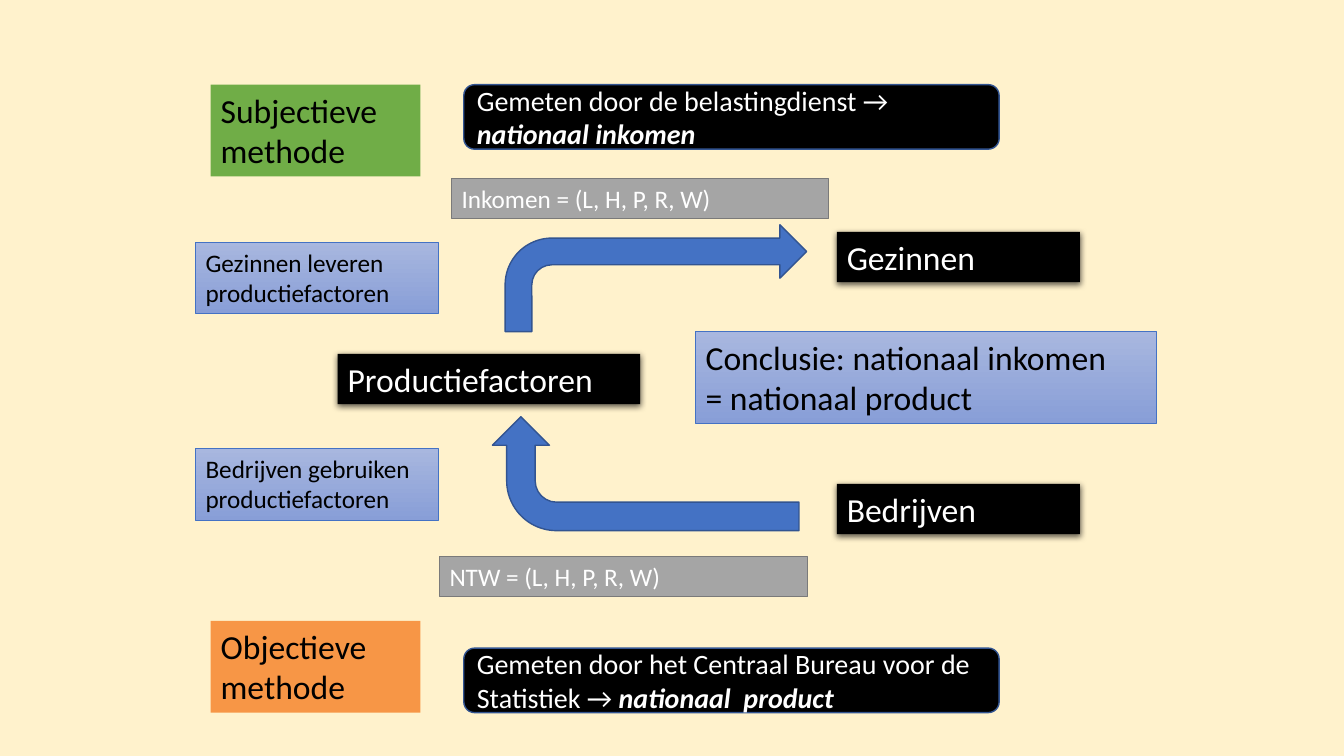
from lxml import etree
from pptx import Presentation, util as u
from pptx.dml.color import RGBColor
from pptx.enum import shapes, text
from pptx.oxml.ns import qn

HUES = {
    "cream": "FFF2CC", "black": "000000", "white": "FFFFFF",
    "blue": "4472C4", "navy": "325491", "pale": "A8B7DF", "deep": "889ED7",
    "gray": "A5A5A5", "slate": "7A7A7A", "green": "70AD47", "orange": "F79646",
}
FONT = "Calibri"

# style: fill, edge, edge width, text colour, size, shadow
STYLES = {
    "actor": ("black", None, 0, "white", 24, True),
    "flow": (("pale", "deep"), "blue", 0.5, "black", 18, False),
    "sum": (("pale", "deep"), "blue", 0.5, "black", 24, False),
    "formula": ("gray", "slate", 1, "white", 18, False),
    "source": ("black", "navy", 1, "white", 20, False),
    "good": ("green", None, 0, "black", 24, False),
    "warm": ("orange", None, 0, "black", 24, False),
    "arrow": ("blue", "navy", 1, "white", 18, False),
}

BOXES = [
    ("actor", (8.3, 4.8, 2.41, 0.5), ["Bedrijven"]),
    ("actor", (8.3, 2.3, 2.41, 0.5), ["Gezinnen"]),
    ("actor", (3.35, 3.51, 3, 0.5), ["Productiefactoren"]),
    ("flow", (1.94, 4.45, 2.41, 0.71), ["Bedrijven gebruiken productiefactoren"]),
    ("flow", (1.94, 2.4, 2.41, 0.71), ["Gezinnen leveren productiefactoren"]),
    ("formula", (4.48, 1.77, 3.74, 0.4), ["Inkomen = (L, H, P, R, W)"]),
    ("formula", (4.36, 5.52, 3.65, 0.4), ["NTW = (L, H, P, R, W)"]),
    ("sum", (6.9, 3.29, 4.57, 0.91),
     ["Conclusie: nationaal inkomen", "= nationaal product"]),
    ("good", (2.09, 0.84, 2.08, 0.91), ["Subjectieve", "methode"]),
    ("warm", (2.09, 6.16, 2.08, 0.91), ["Objectieve", "methode"]),
]
SOURCES = [
    (0.84, "Gemeten door de belastingdienst → ", "nationaal inkomen"),
    (6.43, "Gemeten door het Centraal Bureau voor de Statistiek → ",
     "nationaal  product"),
]
ARROWS = [
    ((5.01, 2.23, 2.99, 1.06), 0, False),
    ((5.84, 3.18, 1.13, 3.04), 90, True),
]


def hue(name):
    return RGBColor.from_string(HUES[name])


def shade(shape):
    fx = shape._element.spPr.find(qn("a:effectLst"))
    drop = etree.SubElement(fx, qn("a:outerShdw"), blurRad=str(u.Pt(4.5)),
                            dist=str(u.Pt(1.5)), dir="5400000",
                            algn="ctr", rotWithShape="0")
    tint = etree.SubElement(drop, qn("a:srgbClr"), val=HUES["black"])
    etree.SubElement(tint, qn("a:alpha"), val="63000")


def draw(slide, kind, area, style):
    fill, edge, width, _, _, dark = STYLES[style]
    shape = slide.shapes.add_shape(kind, *map(u.Inches, area))
    shape.shadow.inherit = False
    if isinstance(fill, tuple):
        shape.fill.gradient()
        shape.fill.gradient_angle = 270
        for stop, name in zip(shape.fill.gradient_stops, fill):
            stop.color.rgb = hue(name)
    else:
        shape.fill.solid()
        shape.fill.fore_color.rgb = hue(fill)
    if edge:
        shape.line.color.rgb = hue(edge)
        shape.line.width = u.Pt(width)
    else:
        shape.line.fill.background()
    if dark:
        shade(shape)
    return shape


def write(shape, style, lines, fit):
    color, size = STYLES[style][3:5]
    frame = shape.text_frame
    frame.word_wrap = True
    if fit:
        frame.auto_size = text.MSO_AUTO_SIZE.SHAPE_TO_FIT_TEXT
        frame.vertical_anchor = text.MSO_ANCHOR.TOP
    else:
        frame.vertical_anchor = text.MSO_ANCHOR.MIDDLE
    for i, line in enumerate(lines):
        para = frame.add_paragraph() if i else frame.paragraphs[0]
        para.alignment = text.PP_ALIGN.LEFT
        for words, strong in line:
            run = para.add_run()
            run.text = words
            font = run.font
            font.name, font.size = FONT, u.Pt(size)
            font.color.rgb = hue(color)
            if strong:
                font.bold = font.italic = True


def main():
    deck = Presentation()
    deck.slide_width, deck.slide_height = u.Inches(13.33), u.Inches(7.5)
    slide = deck.slides.add_slide(deck.slide_layouts[6])
    slide.background.fill.solid()
    slide.background.fill.fore_color.rgb = hue("cream")
    kinds = shapes.MSO_SHAPE

    for area, turn, flip in ARROWS:
        arrow = draw(slide, kinds.BENT_ARROW, area, "arrow")
        arrow.rotation = turn
        if flip:
            for side in ("flipH", "flipV"):
                arrow._element.spPr.xfrm.set(side, "1")
    for style, area, lines in BOXES:
        box = draw(slide, kinds.RECTANGLE, area, style)
        write(box, style, [[(line, False)] for line in lines], True)
    for top, lead, term in SOURCES:
        box = draw(slide, kinds.ROUNDED_RECTANGLE, (4.6, top, 5.31, 0.64), "source")
        write(box, "source", [[(lead, False), (term, True)]], False)

    deck.save("out.pptx")


if __name__ == "__main__":
    main()
